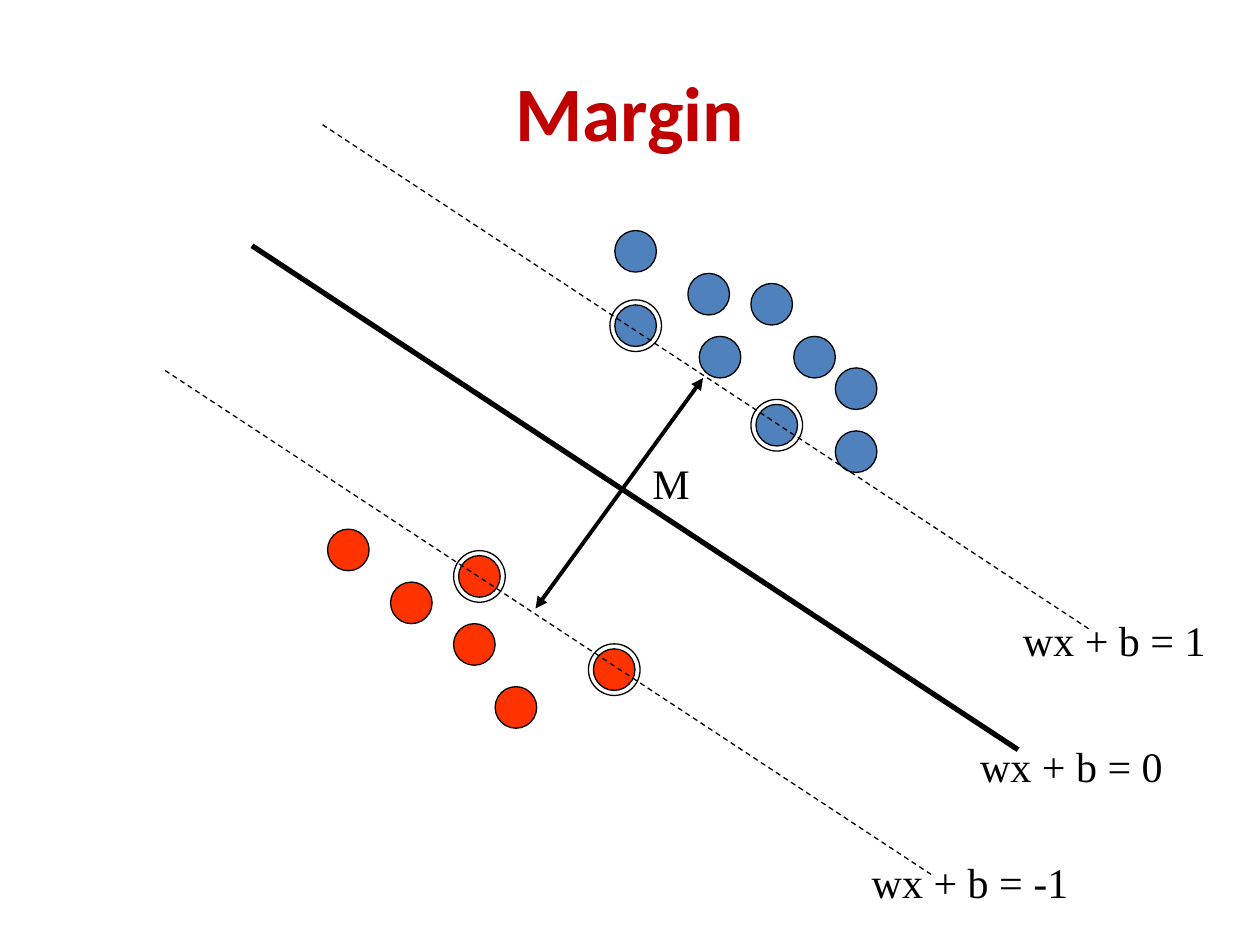
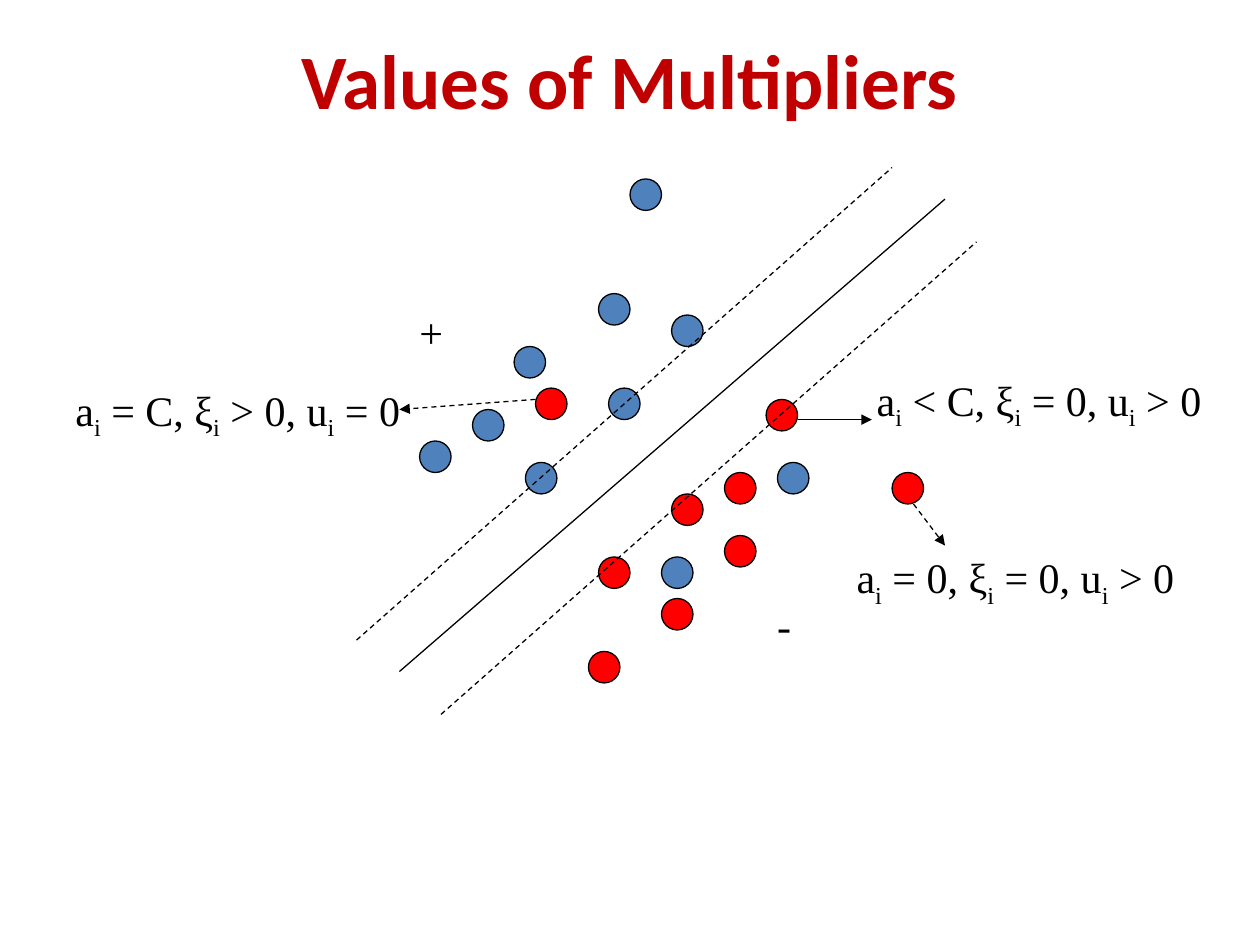
from lxml.etree import SubElement
from pptx import Presentation
from pptx.dml.color import RGBColor
from pptx.enum.dml import MSO_LINE
from pptx.enum.shapes import MSO_CONNECTOR, MSO_SHAPE
from pptx.enum.text import MSO_ANCHOR, MSO_AUTO_SIZE, PP_ALIGN
from pptx.oxml.ns import qn
from pptx.util import Inches, Pt

TITLE_RED = RGBColor(0xC0, 0x00, 0x00)
BLUE = RGBColor(0x4F, 0x81, 0xBD)
ORANGE_RED = RGBColor(0xFF, 0x33, 0x00)
RED = RGBColor(0xFF, 0x00, 0x00)
BLACK = RGBColor(0x00, 0x00, 0x00)
THIN = 0.75
SUBSCRIPT = "_i"

# Dots: (colour, left and top of each); lines: (start, end, width, dashed, arrow ends)
# Labels: (left, top, width, text), where "_i" stands for a subscript i
MARGIN = {
    "title": "Margin",
    "title_top": 0.25,
    "dot_size": 0.33,
    "dots": [
        (BLUE, [(4.88, 1.83), (5.46, 2.17), (5.96, 2.25), (5.55, 2.67),
                (6.3, 2.67), (6.63, 2.92), (6.63, 3.42)]),
        (ORANGE_RED, [(3.6, 4.95), (3.93, 5.45), (3.1, 4.62), (2.6, 4.2)]),
    ],
    "support_vectors": [
        (BLUE, [(4.88, 2.42), (6, 3.21)]),
        (ORANGE_RED, [(3.64, 4.41), (4.71, 5.15)]),
    ],
    "lines": [
        ((2, 1.95), (8.08, 5.95), 3, False, ()),
        ((1.31, 2.94), (7.39, 6.94), THIN, True, ()),
        ((2.56, 0.99), (8.64, 4.99), THIN, True, ()),
        ((4.25, 4.83), (5.58, 3), 2.25, False, ("headEnd", "tailEnd")),
    ],
    "labels": [
        (8.02, 4.83, 1.65, "wx + b = 1"),
        (7.68, 5.83, 1.65, "wx + b = 0"),
        (6.82, 6.75, 1.76, "wx + b = -1"),
        (5.08, 3.58, 0.5, "M"),
    ],
}
MULTIPLIERS = {
    "title": "Values of Multipliers",
    "title_top": 0,
    "dot_size": 0.25,
    "dots": [
        (BLUE, [(4.08, 2.75), (4.75, 2.33), (6.17, 3.67), (3.75, 3.25),
                (4.83, 3.08), (4.17, 3.67), (5.33, 2.5), (5, 1.42),
                (3.33, 3.5), (5.25, 4.42)]),
        (RED, [(4.75, 4.42), (6.08, 3.17), (5.33, 3.92), (5.75, 4.25),
               (5.75, 3.75), (4.67, 5.17), (5.25, 4.75), (7.08, 3.75),
               (4.25, 3.08)]),
    ],
    "support_vectors": [],
    "lines": [
        ((3.17, 5.33), (7.5, 1.58), THIN, False, ()),
        ((3.5, 5.67), (7.75, 1.92), THIN, True, ()),
        ((2.83, 5.08), (7.08, 1.33), THIN, True, ()),
        ((4.25, 3.17), (3.17, 3.25), THIN, True, ("tailEnd",)),
        ((7.25, 4), (7.5, 4.33), THIN, True, ("tailEnd",)),
        ((6.33, 3.33), (6.92, 3.33), THIN, False, ("tailEnd",)),
    ],
    "labels": [
        (3.23, 2.38, 0.39, "+"),
        (6.07, 4.71, 0.31, "-"),
        (0.5, 3, 2.89, "a_i = C, ξ_i > 0, u_i = 0"),
        (6.7, 4.33, 2.83, "a_i = 0, ξ_i = 0, u_i > 0"),
        (6.86, 2.92, 2.89, "a_i < C, ξ_i = 0, u_i > 0"),
    ],
}
RING_GAP = 0.04


def style_run(run, font_name, size, colour, bold=False):
    run.font.name = font_name
    run.font.size = Pt(size)
    run.font.color.rgb = colour
    run.font.bold = bold


def add_title(slide, text, top):
    box = slide.shapes.add_textbox(Inches(0.75), Inches(top), Inches(8.5), Inches(1.25))
    frame = box.text_frame
    frame.word_wrap = True
    frame.vertical_anchor = MSO_ANCHOR.MIDDLE
    frame.text = text
    paragraph = frame.paragraphs[0]
    paragraph.alignment = PP_ALIGN.CENTER
    style_run(paragraph.runs[0], "Calibri", 44, TITLE_RED, bold=True)


def add_circle(slide, left, top, size, colour=None):
    circle = slide.shapes.add_shape(
        MSO_SHAPE.OVAL, Inches(left), Inches(top), Inches(size), Inches(size))
    circle.shadow.inherit = False
    if colour is None:
        circle.fill.background()
    else:
        circle.fill.solid()
        circle.fill.fore_color.rgb = colour
    circle.line.color.rgb = BLACK
    circle.line.width = Pt(THIN)


def add_line(slide, start, end, width, dashed, arrow_ends):
    line = slide.shapes.add_connector(
        MSO_CONNECTOR.STRAIGHT, *(Inches(value) for value in start + end))
    line.line.color.rgb = BLACK
    line.line.width = Pt(width)
    if dashed:
        line.line.dash_style = MSO_LINE.DASH
    properties = line._element.spPr
    for arrow_end in arrow_ends:
        SubElement(properties.find(qn("a:ln")), qn(f"a:{arrow_end}"), type="triangle")
    SubElement(properties, qn("a:effectLst"))


def add_label(slide, left, top, width, text):
    box = slide.shapes.add_textbox(Inches(left), Inches(top), Inches(width), Inches(0.5))
    frame = box.text_frame
    frame.word_wrap = False
    frame.auto_size = MSO_AUTO_SIZE.SHAPE_TO_FIT_TEXT
    paragraph = frame.paragraphs[0]
    for index, part in enumerate(text.split(SUBSCRIPT)):
        if index:
            subscript = paragraph.add_run()
            subscript.text = "i"
            style_run(subscript, "Times New Roman", 24, BLACK)
            subscript.font._element.set("baseline", "-25000")
        run = paragraph.add_run()
        run.text = part
        style_run(run, "Times New Roman", 24, BLACK)


def build_slide(presentation, content):
    slide = presentation.slides.add_slide(presentation.slide_layouts[6])
    size = content["dot_size"]
    add_title(slide, content["title"], content["title_top"])
    # Data points, then rings around the support vectors
    for colour, places in content["dots"] + content["support_vectors"]:
        for left, top in places:
            add_circle(slide, left, top, size, colour)
    for _, places in content["support_vectors"]:
        for left, top in places:
            add_circle(slide, left - RING_GAP, top - RING_GAP, size + 2 * RING_GAP)
    # Boundaries, arrows and formulas
    for line in content["lines"]:
        add_line(slide, *line)
    for label in content["labels"]:
        add_label(slide, *label)


def main():
    presentation = Presentation()
    presentation.slide_width = Inches(10)
    presentation.slide_height = Inches(7.5)
    for content in (MARGIN, MULTIPLIERS):
        build_slide(presentation, content)
    presentation.save("out.pptx")


if __name__ == "__main__":
    main()
